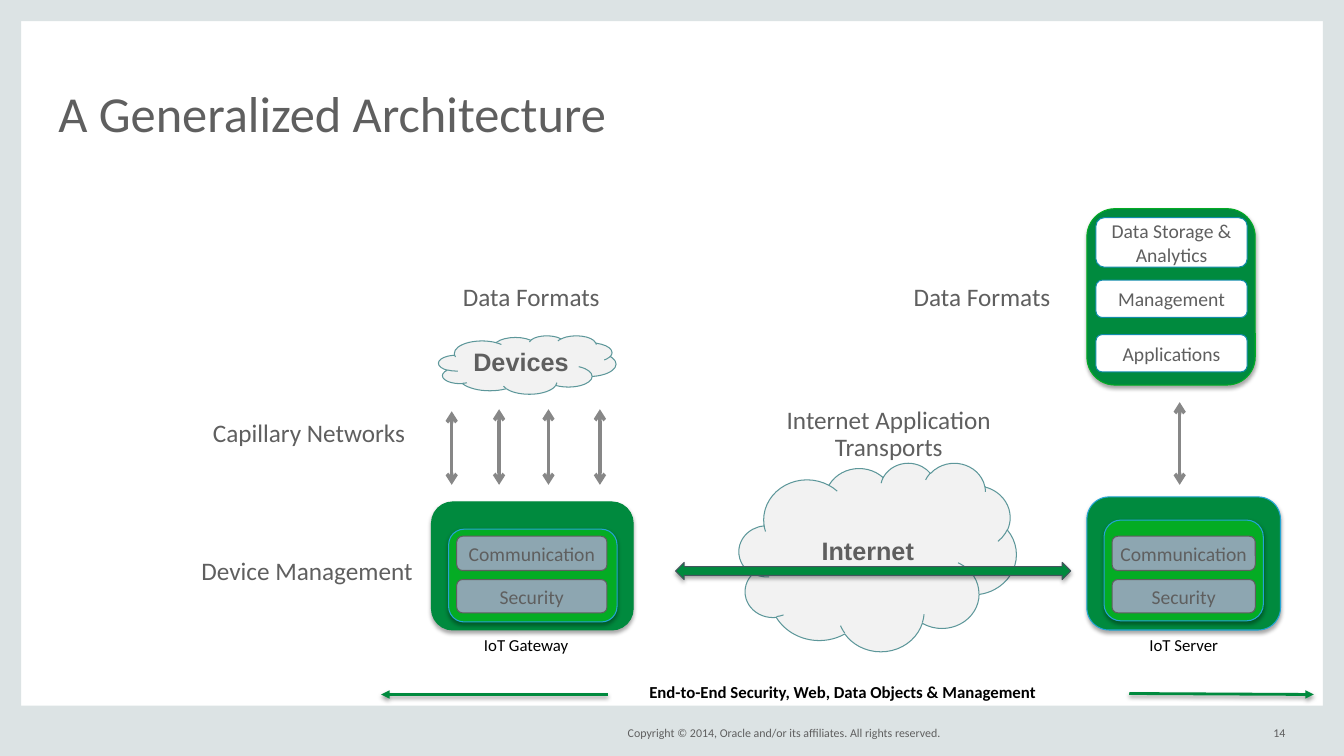
"""Build the slide showing a generalized architecture from devices to server."""
from lxml import etree
from pptx import Presentation
from pptx import util as u
from pptx.dml.color import RGBColor
from pptx.enum import shapes, text
from pptx.oxml.ns import qn

GREEN, LIME, BLUE, GRAY = "008A3E", "04AC24", "24A5D4", "5F5F5F"
SHAPE = shapes.MSO_SHAPE
ALIGN = text.PP_ALIGN
MIDDLE = text.MSO_ANCHOR.MIDDLE

FRAME = [(0, 0, 0.21, 7.5), (13.12, 0, 0.21, 7.5), (0, 7, 13.33, 0.5), (0, 0, 13.33, 0.21)]
TITLE = "A Generalized Architecture"
FOOTER = [
    ("Copyright © 2014, Oracle and/or its affiliates. All rights reserved.", (5.83, 7.17, 3.5, 0.2)),
    ("14", (12.33, 7.17, 0.42, 0.2)),
]
CLOUDS = [("Internet", (7.33, 4.59, 2.75, 1.87)), ("Devices", (4.35, 3.33, 1.76, 0.58))]
NODES = [
    {"outer": (4.28, 4.98, 2, 1.27), "line": GREEN, "inner": (4.45, 5.25, 1.67, 0.92), "left": 4.53, "width": 1.49},
    {"outer": (10.78, 4.93, 1.92, 1.32), "line": BLUE, "inner": (10.95, 5.16, 1.58, 1), "left": 11.03, "width": 1.42},
]
NODE_PARTS = [("Communication", 5.32, 0.34), ("Security", 5.75, 0.33)]
NODE_NAMES = [("IoT Gateway", (4.8, 6.3, 1.05, 0.2)), ("IoT Server", (11.4, 6.3, 0.89, 0.2))]
SERVICES_PANEL = (10.78, 2.07, 1.67, 1.75)
SERVICES = [("Data Storage & Analytics", 2.16, 0.49), ("Management", 2.78, 0.37), ("Applications", 3.32, 0.37)]
LABELS = [
    (["Capillary Networks"], (1.91, 4.03, 2.31, 0.55)),
    (["Internet Application", "Transports"], (7.66, 4.04, 2.31, 0.55)),
    (["Data Formats"], (4.42, 2.68, 1.7, 0.55)),
    (["Data Formats"], (8.89, 2.68, 1.7, 0.55)),
    (["Device Management"], (1.89, 5.4, 2.31, 0.55)),
]
LINKS = [(4.48, 4.08), (4.95, 4.06), (5.44, 4.06), (5.95, 4.06), (11.7, 3.99)]
LINK_BOTTOM = 4.81
INTERNET_ARROW = (6.7, 5.58, 3.92, 0.17)
SCOPE = ("End-to-End Security, Web, Data Objects & Management", (6.44, 6.76, 4.5, 0.2))
SCOPE_ARROWS = [((6.03, 6.89), (3.78, 6.89)), ((11.2, 6.88), (13.03, 6.89))]


def color(value):
    return RGBColor.from_string(value)


def add_shadow(shape, blur=3.1, distance=1.8, opacity=35):
    properties = shape._element.spPr
    for old in properties.findall(qn("a:effectLst")):
        properties.remove(old)
    effects = etree.SubElement(properties, qn("a:effectLst"))
    shadow = etree.SubElement(effects, qn("a:outerShdw"), blurRad=str(u.Pt(blur)),
                              dist=str(u.Pt(distance)), dir="5400000", rotWithShape="0")
    black = etree.SubElement(shadow, qn("a:srgbClr"), val="000000")
    etree.SubElement(black, qn("a:alpha"), val=str(opacity * 1000))


def write(shape, lines, size, ink=GRAY, font="Calibri", bold=False,
          align=ALIGN.CENTER, anchor=MIDDLE, spacing=1.0):
    frame = shape.text_frame
    frame.word_wrap = True
    frame.vertical_anchor = anchor
    frame.margin_left = frame.margin_top = frame.margin_right = frame.margin_bottom = 0
    frame.text = "\n".join(lines)
    for paragraph in frame.paragraphs:
        paragraph.alignment = align
        paragraph.line_spacing = spacing
        paragraph.font.size = u.Pt(size)
        paragraph.font.name = font
        paragraph.font.bold = bold
        paragraph.font.color.rgb = color(ink)


def add_shape(slide, kind, box, fill, line=None, shadow=False):
    shape = slide.shapes.add_shape(kind, *map(u.Inches, box))
    shape.shadow.inherit = False
    shape.fill.solid()
    shape.fill.fore_color.rgb = color(fill)
    if line:
        shape.line.color.rgb = color(line)
        shape.line.width = u.Pt(0.75)
    else:
        shape.line.fill.background()
    if shadow:
        add_shadow(shape)
    return shape


def add_text(slide, lines, box, size, **style):
    write(slide.shapes.add_textbox(*map(u.Inches, box)), lines, size, **style)


def add_line(slide, start, end, stroke, width, **ends):
    line = slide.shapes.add_connector(shapes.MSO_CONNECTOR.STRAIGHT, *map(u.Inches, start + end))
    line.line.color.rgb = color(stroke)
    line.line.width = u.Pt(width)
    outline = line.line._get_or_add_ln()
    for end_name, kind in ends.items():
        etree.SubElement(outline, qn(f"a:{end_name}"), type=kind)
    etree.SubElement(line._element.spPr, qn("a:effectLst"))
    return line


def add_cloud(slide, name, box):
    cloud = add_shape(slide, SHAPE.CLOUD, box, "F2F2F2", "5D979A")
    write(cloud, [name], 18, font="Arial", bold=True, spacing=0.9)


def add_boxes(slide, parts, left, width, fill, line):
    for name, top, height in parts:
        box = add_shape(slide, SHAPE.ROUNDED_RECTANGLE, (left, top, width, height), fill, line)
        write(box, [name], 14)


def main():
    presentation = Presentation()
    presentation.slide_width, presentation.slide_height = u.Inches(13.33), u.Inches(7.5)
    slide = presentation.slides.add_slide(presentation.slide_layouts[6])

    for box in FRAME:
        add_shape(slide, SHAPE.RECTANGLE, box, "DCE3E4")
    for line, box in FOOTER:
        add_text(slide, [line], box, 8.5, align=ALIGN.RIGHT)
    add_text(slide, [TITLE], (0.58, 0.44, 12.17, 0.97), 36, align=ALIGN.LEFT,
             anchor=text.MSO_ANCHOR.BOTTOM, spacing=0.8)

    for name, box in CLOUDS:
        add_cloud(slide, name, box)
    add_shape(slide, SHAPE.LEFT_RIGHT_ARROW, INTERNET_ARROW, GREEN, "44555D", shadow=True)

    for node in NODES:
        add_shape(slide, SHAPE.ROUNDED_RECTANGLE, node["outer"], GREEN, node["line"], shadow=True)
        add_shape(slide, SHAPE.ROUNDED_RECTANGLE, node["inner"], LIME, BLUE, shadow=True)
        add_boxes(slide, NODE_PARTS, node["left"], node["width"], "8DA6B1", GRAY)
    for name, box in NODE_NAMES:
        add_text(slide, [name], box, 12, ink="000000", align=ALIGN.LEFT)

    add_shape(slide, SHAPE.ROUNDED_RECTANGLE, SERVICES_PANEL, GREEN, LIME, shadow=True)
    add_boxes(slide, SERVICES, 10.87, 1.5, "FFFFFF", "128CAB")

    for lines, box in LABELS:
        add_text(slide, lines, box, 18, spacing=0.9)
    for x, top in LINKS:
        add_line(slide, (x, LINK_BOTTOM), (x, top), "878787", 2.5, headEnd="arrow", tailEnd="arrow")

    scope, box = SCOPE
    add_text(slide, [scope], box, 12, ink="000000", bold=True, align=ALIGN.LEFT)
    for start, end in SCOPE_ARROWS:
        add_shadow(add_line(slide, start, end, GREEN, 2, tailEnd="triangle"), distance=1.6, opacity=38)

    presentation.save("out.pptx")


if __name__ == "__main__":
    main()
